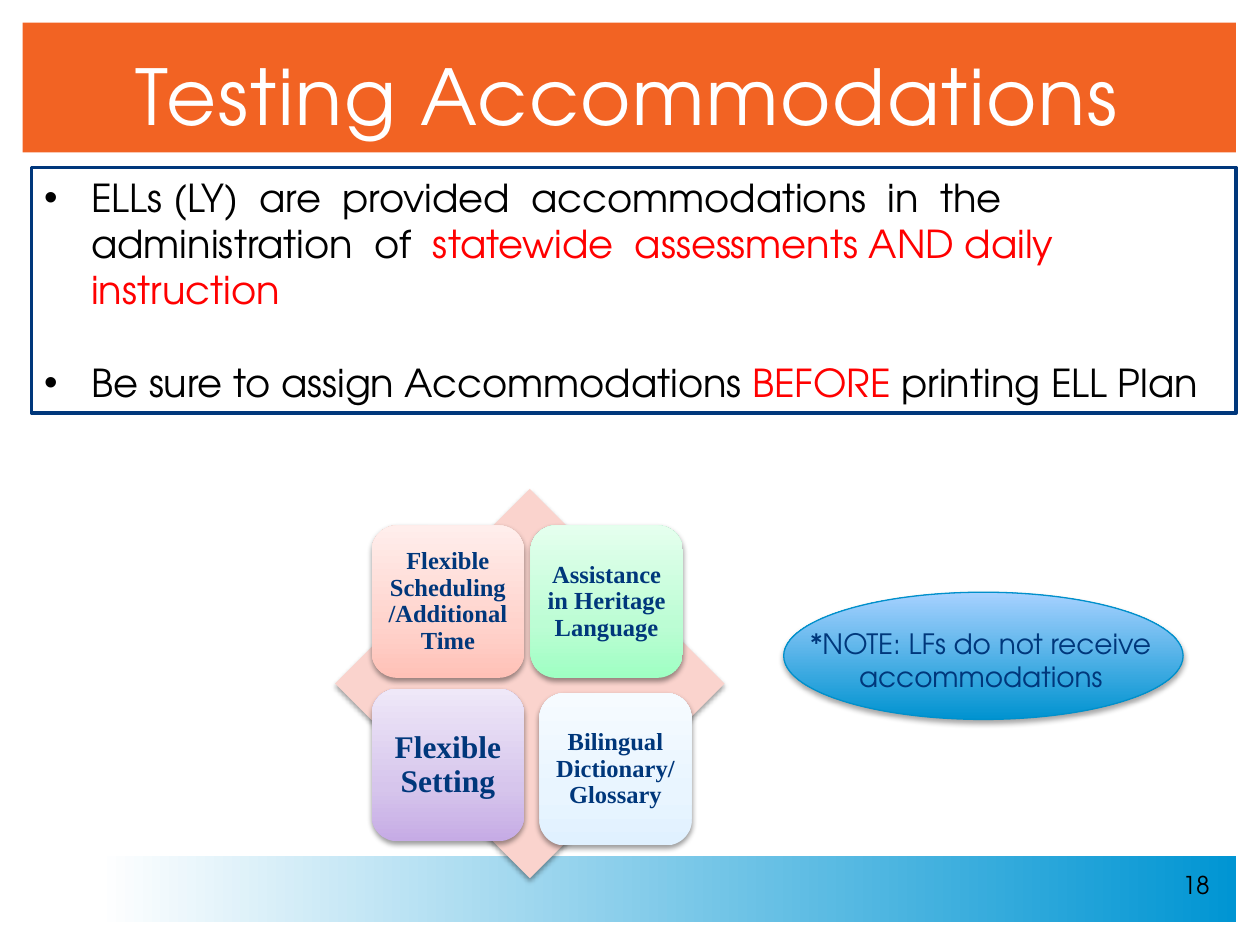
from dataclasses import dataclass
from typing import NamedTuple, Optional

from lxml import etree
from pptx import Presentation
from pptx.dml.color import RGBColor
from pptx.enum.shapes import MSO_SHAPE
from pptx.enum.text import MSO_ANCHOR, MSO_AUTO_SIZE, PP_ALIGN
from pptx.oxml.ns import qn
from pptx.util import Pt

RECT, OVAL = MSO_SHAPE.RECTANGLE, MSO_SHAPE.OVAL
DIAMOND, ROUNDED = MSO_SHAPE.DIAMOND, MSO_SHAPE.ROUNDED_RECTANGLE
CENTER, LEFT, RIGHT = PP_ALIGN.CENTER, PP_ALIGN.LEFT, PP_ALIGN.RIGHT
MIDDLE, BOTTOM, TOP = MSO_ANCHOR.MIDDLE, MSO_ANCHOR.BOTTOM, MSO_ANCHOR.TOP
NO_FIT = MSO_AUTO_SIZE.NONE


@dataclass(frozen=True)
class Theme:
    sans: str = "TeX Gyre Adventor"
    serif: str = "Times New Roman"
    white: str = "FFFFFF"
    black: str = "000000"
    red: str = "FF0000"
    navy: str = "00377B"
    orange: str = "F26323"
    pink: str = "FAD3CD"
    note_line: str = "0090CB"
    title_size: float = 44
    body_size: float = 22
    note_size: float = 16
    small_size: float = 14
    large_size: float = 18


class Box(NamedTuple):
    left: float
    top: float
    width: float
    height: float


class Stop(NamedTuple):
    percent: int
    color: str


class Shadow(NamedTuple):
    opacity: int
    blur: float
    distance: float


class Span(NamedTuple):
    text: str
    color: str


@dataclass(frozen=True)
class Card:
    text: str
    left: float
    top: float
    colors: tuple
    size: float
    inset: float


T = Theme()
CARD_SIDE = 87.12
CARD_SHADOW = Shadow(38, 3.1, 1.6)
NOTE_SHADOW = Shadow(35, 3.1, 1.8)

CARDS = [
    Card("Flexible Scheduling/Additional Time", 212.4, 300.24,
         ("FFC1B7", "FFD3CC", "FFEEEC"), T.small_size, 4.2),
    Card("Assistance in Heritage Language", 303.12, 300.24,
         ("9FFFC3", "BCFDD4", "E5FFEE"), T.small_size, 4.2),
    Card("Flexible Setting", 212.4, 393.6,
         ("C6ABE5", "D6C5EC", "EFE8F8"), T.large_size, 5.4),
    Card("Bilingual Dictionary/Glossary", 308.16, 396,
         ("E0F1FF", "E9F5FF", "F6FBFF"), T.small_size, 4.2),
]
BULLETS = [
    [Span("ELLs (LY)  are  provided  accommodations  in  the  administration  of  ", T.black),
     Span("statewide  assessments AND daily instruction", T.red)],
    [Span("Be sure to assign Accommodations ", T.black),
     Span("BEFORE", T.red),
     Span(" printing ELL Plan", T.black)],
]


def rgb(color: str) -> RGBColor:
    return RGBColor.from_string(color)


def place(sp, box: Box) -> None:
    sp.left, sp.top, sp.width, sp.height = (Pt(v) for v in box)


def add_shape(shapes, kind, box: Box):
    sp = shapes.add_shape(kind, *(Pt(v) for v in box))
    sp.shadow.inherit = False
    sp.line.fill.background()
    return sp


def fill_solid(sp, color: str) -> None:
    sp.fill.solid()
    sp.fill.fore_color.rgb = rgb(color)


def fill_gradient(sp, stops: list, angle: float) -> None:
    sp.fill.gradient()
    sp.fill.gradient_angle = angle
    gs_list = sp.element.spPr.find(".//" + qn("a:gsLst"))
    for old in list(gs_list):
        gs_list.remove(old)
    for stop in stops:
        gs = etree.SubElement(gs_list, qn("a:gs"), pos=str(stop.percent * 1000))
        etree.SubElement(gs, qn("a:srgbClr"), val=stop.color)


def add_shadow(sp, shadow: Shadow) -> None:
    effects = sp.element.spPr.find(qn("a:effectLst"))
    outer = etree.SubElement(effects, qn("a:outerShdw"), blurRad=str(Pt(shadow.blur)),
                             dist=str(Pt(shadow.distance)), dir="5400000", rotWithShape="0")
    color = etree.SubElement(outer, qn("a:srgbClr"), val=T.black)
    etree.SubElement(color, qn("a:alpha"), val=str(shadow.opacity * 1000))


def set_frame(tf, anchor, insets: tuple = (7.2, 3.6, 7.2, 3.6)) -> None:
    tf.word_wrap = True
    tf.auto_size = NO_FIT
    tf.vertical_anchor = anchor
    tf.margin_left, tf.margin_top, tf.margin_right, tf.margin_bottom = (Pt(v) for v in insets)


def add_run(p, span: Span, size: float, font: str, bold: Optional[bool] = None):
    r = p.add_run()
    r.text = span.text
    r.font.size = Pt(size)
    r.font.name = font
    r.font.bold = bold
    r.font.color.rgb = rgb(span.color)
    return r


def add_label(shapes, box: Box, span: Span, size: float, align) -> None:
    tf = shapes.add_textbox(*(Pt(v) for v in box)).text_frame
    set_frame(tf, TOP)
    p = tf.paragraphs[0]
    p.alignment = align
    add_run(p, span, size, T.sans)


def add_card(shapes, card: Card) -> None:
    sp = add_shape(shapes, ROUNDED, Box(card.left, card.top, CARD_SIDE, CARD_SIDE))
    fill_gradient(sp, [Stop(*pair) for pair in zip((0, 35, 100), card.colors)], 90)
    add_shadow(sp, CARD_SHADOW)
    set_frame(sp.text_frame, MIDDLE, (card.inset,) * 4)
    p = sp.text_frame.paragraphs[0]
    p.alignment = CENTER
    p.line_spacing = 0.9
    add_run(p, Span(card.text, T.navy), card.size, T.serif, True)


def add_backdrop(shapes) -> None:
    band = add_shape(shapes, RECT, Box(56.16, 488.88, 650.16, 38.16))
    fill_gradient(band, [Stop(0, T.white), Stop(100, "0095D3")], 0)
    banner = add_shape(shapes, RECT, Box(12.96, 12.96, 693.36, 74.16))
    fill_solid(banner, T.orange)
    tree = band.element.getparent()
    for index, sp in enumerate((band, banner), 2):
        tree.insert(index, sp.element)


def write_title(sp) -> None:
    place(sp, Box(10.8, 12.96, 695.52, 74.88))
    set_frame(sp.text_frame, BOTTOM, (0, 0, 0, 7.2))
    p = sp.text_frame.paragraphs[0]
    p.alignment = CENTER
    r = add_run(p, Span("Testing Accommodations", T.white), T.title_size, T.sans)
    r.font._element.set("spc", "100")


def write_body(sp) -> None:
    place(sp, Box(18, 95.76, 688.32, 140.4))
    fill_solid(sp, T.white)
    sp.line.color.rgb = rgb(T.navy)
    sp.line.width = Pt(2)
    tf = sp.text_frame
    set_frame(tf, TOP)
    for i, spans in enumerate(BULLETS):
        p = tf.add_paragraph() if i else tf.paragraphs[0]
        pPr = p._p.get_or_add_pPr()
        pPr.set("marL", str(Pt(27)))
        pPr.set("indent", str(-Pt(27)))
        etree.SubElement(pPr, qn("a:buChar"), char="•")
        p.alignment = LEFT
        p.space_before = Pt(26.4 if i else 0)
        for span in spans:
            add_run(p, span, T.body_size, T.sans)


def main() -> None:
    prs = Presentation()
    prs.slide_width, prs.slide_height = Pt(720), Pt(540)
    s = prs.slides.add_slide(prs.slide_layouts[1])
    add_backdrop(s.shapes)
    write_title(s.shapes.title)
    write_body(s.placeholders[1])

    note = add_shape(s.shapes, OVAL, Box(447.84, 338.4, 228.24, 72.72))
    fill_gradient(note, [Stop(0, "0093D0"), Stop(100, "A7D1FF")], 90)
    note.line.color.rgb = rgb(T.note_line)
    note.line.width = Pt(0.75)
    add_shadow(note, NOTE_SHADOW)

    group = s.shapes.add_group_shape()
    diamond = add_shape(group.shapes, DIAMOND, Box(191.52, 279.36, 222.48, 222.48))
    fill_solid(diamond, T.pink)
    add_shadow(diamond, CARD_SHADOW)
    for card in CARDS:
        add_card(group.shapes, card)

    add_label(s.shapes, Box(454.32, 354.24, 212.4, 46.08),
              Span("*NOTE: LFs do not receive accommodations", T.navy), T.note_size, CENTER)
    add_label(s.shapes, Box(530.64, 493.92, 167.76, 28.8),
              Span("18", T.black), T.small_size, RIGHT)
    prs.save("out.pptx")


if __name__ == "__main__":
    main()
